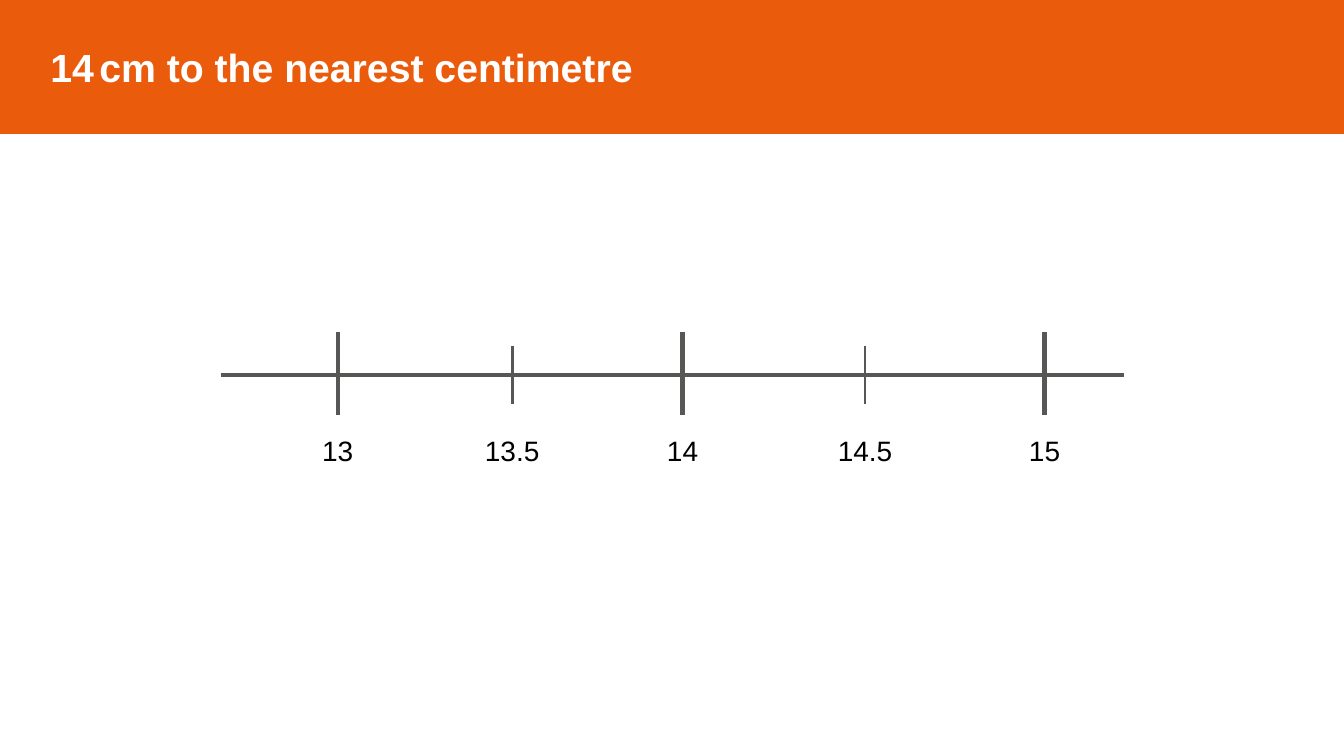
import pptx
import pptx.dml.color
import pptx.enum.shapes
import pptx.enum.text
import pptx.oxml.ns
import pptx.util
from lxml import etree

Inches = pptx.util.Inches
Pt = pptx.util.Pt
ALIGN = pptx.enum.text.PP_ALIGN
ANCHOR = pptx.enum.text.MSO_ANCHOR

COLORS = {"band": "EA5B0C", "line": "575756", "title": "FFFFFF", "label": "000000"}
AXIS = 3.72
# label, x of the tick, whether it marks a whole number
TICKS = [
    ("13", 3.35, True),
    ("13.5", 5.08, False),
    ("14", 6.77, True),
    ("14.5", 8.58, False),
    ("15", 10.36, True),
]


def color(name):
    return pptx.dml.color.RGBColor.from_string(COLORS[name])


def write(para, text, size=20, tint="label", bold=False):
    """Add a formatted run to a paragraph."""
    run = para.add_run()
    run.text = text
    run.font.name = "Arial"
    run.font.size = Pt(size)
    run.font.bold = bold
    run.font.color.rgb = color(tint)


class Board:
    """Draws the elements of one slide in a shared style."""

    def __init__(self, slide):
        self.shapes = slide.shapes

    def band(self, width, height, parts):
        """Draw the title band; parts are (text, size) pairs."""
        rect = pptx.enum.shapes.MSO_SHAPE.RECTANGLE
        box = self.shapes.add_shape(rect, 0, 0, Inches(width), Inches(height))
        box.shadow.inherit = False
        box.fill.solid()
        box.fill.fore_color.rgb = color("band")
        box.line.color.rgb = color("band")
        box.line.width = Pt(1)
        frame = box.text_frame
        frame.margin_left = Inches(0.5)
        frame.vertical_anchor = ANCHOR.MIDDLE
        para = frame.paragraphs[0]
        para.alignment = ALIGN.LEFT
        for text, size in parts:
            write(para, text, size=size, tint="title", bold=True)

    def line(self, x1, y1, x2, y2, width=3):
        kind = pptx.enum.shapes.MSO_CONNECTOR.STRAIGHT
        ends = [Inches(n) for n in (x1, y1, x2, y2)]
        line = self.shapes.add_connector(kind, *ends)
        line.line.color.rgb = color("line")
        line.line.width = Pt(width)
        etree.SubElement(line._element.spPr, pptx.oxml.ns.qn("a:effectLst"))

    def label(self, text, mid, top):
        """Write a label centred on the x position mid."""
        width = 0.51 if len(text) == 2 else 0.75
        box = self.shapes.add_textbox(
            Inches(mid - width / 2), Inches(top), Inches(width), Inches(0.44))
        frame = box.text_frame
        frame.word_wrap = False
        frame.auto_size = pptx.enum.text.MSO_AUTO_SIZE.SHAPE_TO_FIT_TEXT
        para = frame.paragraphs[0]
        para.alignment = ALIGN.CENTER
        write(para, text)


def main():
    deck = pptx.Presentation()
    deck.slide_width = Inches(13.33)
    deck.slide_height = Inches(7.5)
    board = Board(deck.slides.add_slide(deck.slide_layouts[6]))

    board.band(13.33, 1.32, [("14", 28), (" ", 14), ("cm to the nearest centimetre", 28)])
    board.line(2.19, AXIS, 11.15, AXIS)
    for text, x, whole in TICKS:
        if whole:
            board.line(x, 3.29, x, 4.12)
        else:
            board.line(x, 3.43, x, 4.01, width=2)
        board.label(text, x, 4.25)
    deck.save("out.pptx")


if __name__ == "__main__":
    main()
